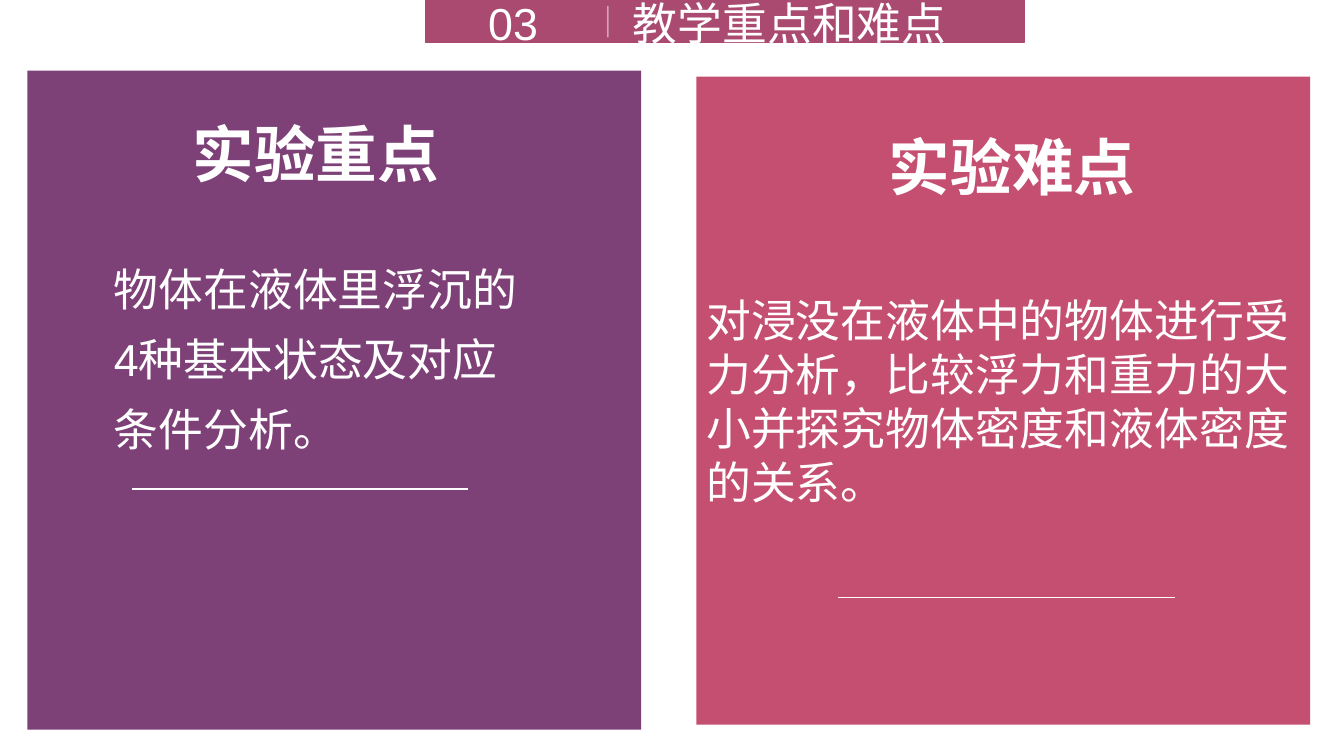
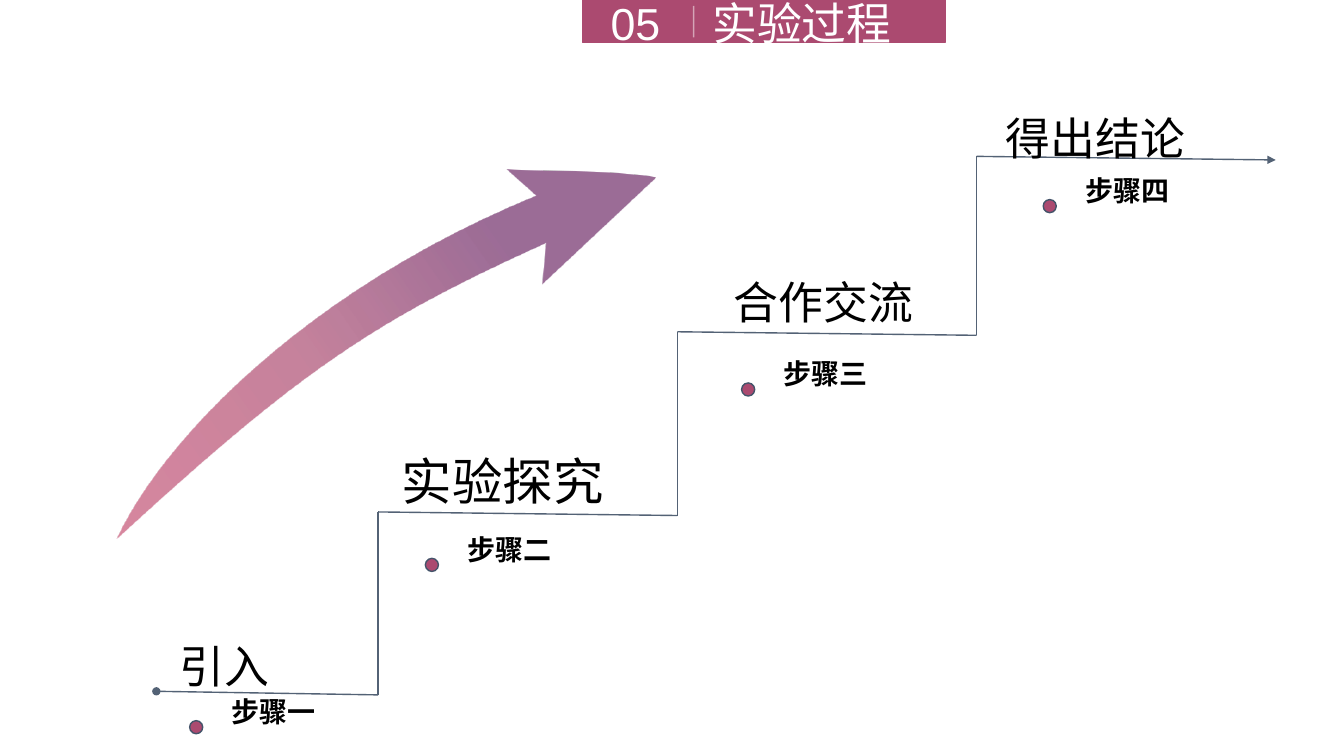
from lxml.etree import SubElement
from pptx import Presentation
from pptx.dml.color import RGBColor
from pptx.enum.lang import MSO_LANGUAGE_ID
from pptx.enum.shapes import MSO_CONNECTOR, MSO_SHAPE
from pptx.enum.text import MSO_ANCHOR, PP_ALIGN
from pptx.oxml.ns import qn
from pptx.util import Cm, Pt

FONT = "Arial"
COLORS = {
    "purple": "7D4178",
    "plum": "AB4A70",
    "rose": "C54F71",
    "stair": "536275",
    "ring": "44546A",
    "white": "FFFFFF",
    "black": "000000",
}

HEADERS = [
    {"number": "03", "title": "教学重点和难点", "x": 10.72, "w": 15.09,
     "number_w": 4.42, "divider_x": 15.32, "title_x": 15.7},
    {"number": "05", "title": "实验过程", "x": 14.68, "w": 9.14,
     "number_w": 2.67, "divider_x": 17.48, "title_x": 17.7},
]

CARDS = [
    {"color": "purple", "at": (0.69, 1.78, 15.47, 16.61),
     "heading": "实验重点", "heading_at": (4.57, 2.79, 6.78, 2.13),
     "body": "物体在液体里浮沉的4种基本状态及对应条件分析。",
     "body_at": (2.62, 6.07, 11.25, 5.59), "spacing": 1.3,
     "rule": (3.33, 12.32)},
    {"color": "rose", "at": (17.55, 1.93, 15.47, 16.33),
     "heading": "实验难点", "heading_at": (22.12, 3.12, 6.78, 2.13),
     "body": "对浸没在液体中的物体进行受力分析，比较浮力和重力的大小并探究物体密度和液体密度的关系。",
     "body_at": None, "spacing": None,
     "rule": (21.13, 15.06)},
]
RULE_W = 8.47

STEPS = [
    {"y": 17.42, "tag": "步骤一", "dot": (4.78, 18.16),
     "title": "引入", "title_at": (4.27, 15.98, 5.23, 1.63), "size": 32},
    {"y": 12.9, "tag": "步骤二", "dot": (10.72, 14.07),
     "title": "实验探究", "title_at": (9.88, 11.23, 7.92, 1.8), "size": 36},
    {"y": 8.36, "tag": "步骤三", "dot": (18.69, 9.65),
     "title": "合作交流", "title_at": (18.24, 6.81, 5.89, 1.63), "size": 32},
    {"y": 3.94, "tag": "步骤四", "dot": (26.29, 5.03),
     "title": "得出结论", "title_at": (25.1, 2.67, 6.91, 1.63), "size": 32},
]
START_X, RISER_X, TREAD_W, TREAD_DROP = 3.94, 9.53, 7.54, 0.09
DOT = 0.33

ARROW_START = (2.95, 13.56)
ARROW_PATH = [
    [(4.06, 11.15), (7.62, 7.34), (13.49, 4.93)],
    [(12.75, 4.27)],
    [(14, 4.34), (15.24, 4.27), (16.51, 4.47)],
    [(13.64, 7.16)],
    [(13.74, 6.12)],
    [(9.4, 8.08), (7.57, 9.32), (2.95, 13.56)],
]
ARROW_STOPS = [(0, "rose", 68), (40, "plum", 68), (75, "purple", 77)]


def rgb(name):
    return RGBColor.from_string(COLORS[name])


def lengths(values):
    return [Cm(v) for v in values]


def add_text(sp, text, size=32, color="white", bold=False, align=PP_ALIGN.LEFT,
             anchor=MSO_ANCHOR.TOP, wrap=True, spacing=None):
    tf = sp.text_frame
    tf.word_wrap = wrap
    tf.vertical_anchor = anchor
    p = tf.paragraphs[0]
    p.alignment = align
    if spacing:
        p.line_spacing = spacing
    r = p.add_run()
    r.text = text
    r.font.name = FONT
    r.font.size = Pt(size)
    r.font.bold = bold
    r.font.color.rgb = rgb(color)
    r.font.language_id = MSO_LANGUAGE_ID.SIMPLIFIED_CHINESE


def add_box(s, at, text, **fmt):
    add_text(s.shapes.add_textbox(*lengths(at)), text, **fmt)


def add_shape(s, kind, at, fill, line=None):
    sp = s.shapes.add_shape(kind, *lengths(at))
    sp.shadow.inherit = False
    sp.fill.solid()
    sp.fill.fore_color.rgb = rgb(fill)
    if line:
        sp.line.color.rgb = rgb(line)
        sp.line.width = Pt(1)
    else:
        sp.line.fill.background()
    return sp


def add_line(s, start, end, color, alpha=None, head=None, tail=None):
    cx = s.shapes.add_connector(MSO_CONNECTOR.STRAIGHT, *lengths(start + end))
    cx.line.color.rgb = rgb(color)
    cx.line.width = Pt(1)
    sp_pr = cx.element.spPr
    SubElement(sp_pr, qn("a:effectLst"))
    ln = sp_pr.find(qn("a:ln"))
    if alpha:
        srgb = ln.find(".//" + qn("a:srgbClr"))
        SubElement(srgb, qn("a:alpha"), val=str(alpha * 1000))
    for tag, kind in (("a:headEnd", head), ("a:tailEnd", tail)):
        if kind:
            SubElement(ln, qn(tag), type=kind)


def add_header(s, h):
    add_shape(s, MSO_SHAPE.RECTANGLE, (h["x"], 0, h["w"], 1.07), "plum", "plum")
    title_w = h["x"] + h["w"] - h["title_x"]
    add_box(s, (h["title_x"], -0.94, title_w, 3), h["title"],
            anchor=MSO_ANCHOR.MIDDLE)
    add_box(s, (h["x"], -0.94, h["number_w"], 3), h["number"],
            anchor=MSO_ANCHOR.MIDDLE, align=PP_ALIGN.CENTER)
    add_line(s, (h["divider_x"], 0.15), (h["divider_x"], 0.94), "white", alpha=49)


def curve(start, controls, count=24):
    if len(controls) == 1:
        return controls
    pts = [start] + controls
    weights = (1, 3, 3, 1)
    return [
        tuple(sum(w * (1 - t) ** (3 - i) * t ** i * pt[axis]
                  for i, (w, pt) in enumerate(zip(weights, pts)))
              for axis in (0, 1))
        for t in (n / count for n in range(1, count + 1))
    ]


def add_growth_arrow(s):
    points = [ARROW_START]
    for controls in ARROW_PATH:
        points += curve(points[-1], controls)
    fb = s.shapes.build_freeform(*lengths(points[0]))
    fb.add_line_segments([lengths(pt) for pt in points[1:]], close=True)
    sp = fb.convert_to_shape()
    sp.shadow.inherit = False
    sp.line.fill.background()
    sp.fill.gradient()
    sp.fill.gradient_angle = 35
    stops = sp.element.spPr.find(".//" + qn("a:gsLst"))
    stops.clear()
    for pos, color, alpha in ARROW_STOPS:
        gs = SubElement(stops, qn("a:gs"), pos=str(pos * 1000))
        srgb = SubElement(gs, qn("a:srgbClr"), val=COLORS[color])
        SubElement(srgb, qn("a:alpha"), val=str(alpha * 1000))


def add_card(s, card):
    sp = add_shape(s, MSO_SHAPE.RECTANGLE, card["at"], card["color"])
    if card["body_at"]:
        add_box(s, card["body_at"], card["body"], spacing=card["spacing"])
    else:
        add_text(sp, card["body"], anchor=MSO_ANCHOR.MIDDLE)
    add_box(s, card["heading_at"], card["heading"], size=44, bold=True,
            align=PP_ALIGN.CENTER, wrap=False)
    x, y = card["rule"]
    add_line(s, (x, y), (x + RULE_W, y), "white")


def add_step(s, i, step):
    y = step["y"]
    left = RISER_X + (i - 1) * TREAD_W if i else START_X
    right = RISER_X + i * TREAD_W
    add_line(s, (left, y), (right, y + TREAD_DROP), "stair",
             head=None if i else "oval",
             tail="triangle" if i == len(STEPS) - 1 else None)
    if i:
        add_line(s, (left, y), (left, STEPS[i - 1]["y"] + TREAD_DROP), "stair")
    x, top = step["dot"]
    add_shape(s, MSO_SHAPE.OVAL, (x, top, DOT, DOT), "plum", "ring")
    add_box(s, (x + 0.81, top - 0.78, 2.64, 1.12), step["tag"], size=20,
            color="black", bold=True, wrap=False)
    add_box(s, step["title_at"], step["title"], size=step["size"], color="black")


def main():
    prs = Presentation()
    prs.slide_width, prs.slide_height = Cm(33.87), Cm(19.05)
    focus, process = [prs.slides.add_slide(prs.slide_layouts[6]) for _ in HEADERS]
    for s, header in zip((focus, process), HEADERS):
        add_header(s, header)
    for card in CARDS:
        add_card(focus, card)
    add_growth_arrow(process)
    for i, step in enumerate(STEPS):
        add_step(process, i, step)
    prs.save("out.pptx")


if __name__ == "__main__":
    main()
